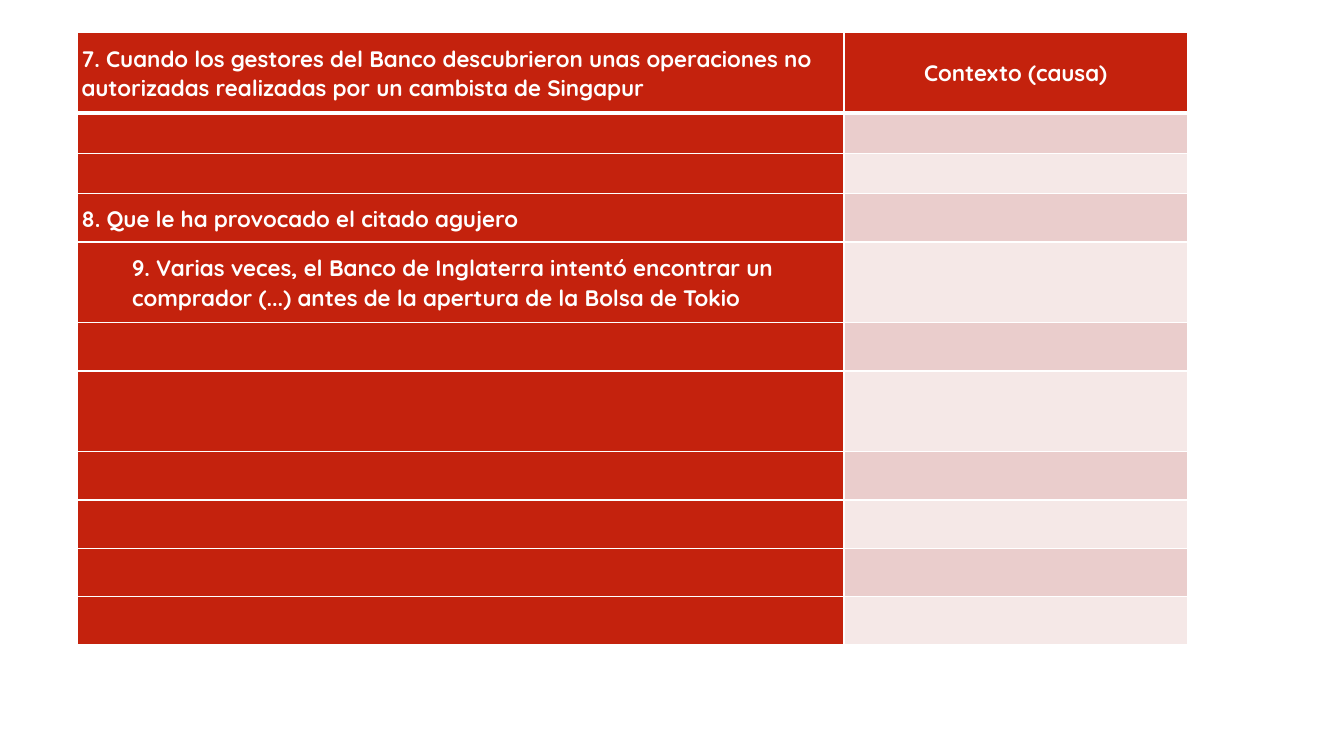
from lxml import etree
from pptx import Presentation
from pptx import util as u
from pptx.dml.color import RGBColor
from pptx.enum import text
from pptx.oxml.ns import qn

COLORS = {"red": "C4220D", "band": "EACDCC", "pale": "F5E8E7", "white": "FFFFFF"}
FONT = "Quicksand"
CAUSE = "Contexto (causa)"
ROWS = [
    ("7. Cuando los gestores del Banco descubrieron unas operaciones no "
     "autorizadas realizadas por un cambista de Singapur", 0.8),
    ("", 0.4),
    ("", 0.4),
    ("8. Que le ha provocado el citado agujero", 0.48),
    ("9. Varias veces, el Banco de Inglaterra intentó encontrar un comprador "
     "(...) antes de la apertura de la Bolsa de Tokio", 0.8),
    ("", 0.48),
    ("", 0.8),
    ("", 0.48),
    ("", 0.48),
    ("", 0.48),
    ("", 0.48),
]
COLUMNS = (7.6, 3.41)
LEFT, TOP = 0.77, 0.32
INDENTED_ROW = 4


def add_borders(cell, bottom, top):
    properties = cell._tc.get_or_add_tcPr()
    for side, points in (("L", 1), ("R", 1), ("T", top), ("B", bottom)):
        line = etree.SubElement(properties, qn(f"a:ln{side}"), w=str(u.Pt(points)))
        fill = etree.SubElement(line, qn("a:solidFill"))
        etree.SubElement(fill, qn("a:srgbClr"), val=COLORS["white"])


def fill_cell(cell, content, color, row):
    cell.margin_left = cell.margin_right = u.Inches(0.04)
    cell.margin_top = cell.margin_bottom = u.Inches(0.04)
    cell.vertical_anchor = text.MSO_ANCHOR.MIDDLE
    add_borders(cell, bottom=3 if row == 0 else 1, top=3 if row == 1 else 1)
    cell.fill.solid()
    cell.fill.fore_color.rgb = RGBColor.from_string(COLORS[color])
    if not content:
        return
    cell.text_frame.text = content
    para = cell.text_frame.paragraphs[0]
    para.line_spacing = 1.07
    font = para.runs[0].font
    font.name, font.size, font.bold = FONT, u.Pt(16), True
    font.color.rgb = RGBColor.from_string(COLORS["white"])


def main():
    deck = Presentation()
    deck.slide_width, deck.slide_height = u.Inches(13.33), u.Inches(7.5)
    page = deck.slides.add_slide(deck.slide_layouts[6])
    frame = page.shapes.add_table(
        len(ROWS), len(COLUMNS), u.Inches(LEFT), u.Inches(TOP),
        u.Inches(sum(COLUMNS)), u.Inches(sum(height for _, height in ROWS)))
    table = frame.table
    table.first_row = table.horz_banding = False
    for column, width in zip(table.columns, COLUMNS):
        column.width = u.Inches(width)
    for index, (statement, height) in enumerate(ROWS):
        table.rows[index].height = u.Inches(height)
        fill_cell(table.cell(index, 0), statement, "red", index)
        cause_color = "red" if index == 0 else "band" if index % 2 else "pale"
        fill_cell(table.cell(index, 1), CAUSE if index == 0 else "", cause_color, index)
    heading = table.cell(0, 1).text_frame.paragraphs[0]
    heading.alignment = text.PP_ALIGN.CENTER
    indented = table.cell(INDENTED_ROW, 0).text_frame.paragraphs[0]
    indent = indented._p.get_or_add_pPr()
    indent.set("marL", str(u.Inches(0.5)))
    indent.set("indent", "0")
    deck.save("out.pptx")


if __name__ == "__main__":
    main()
